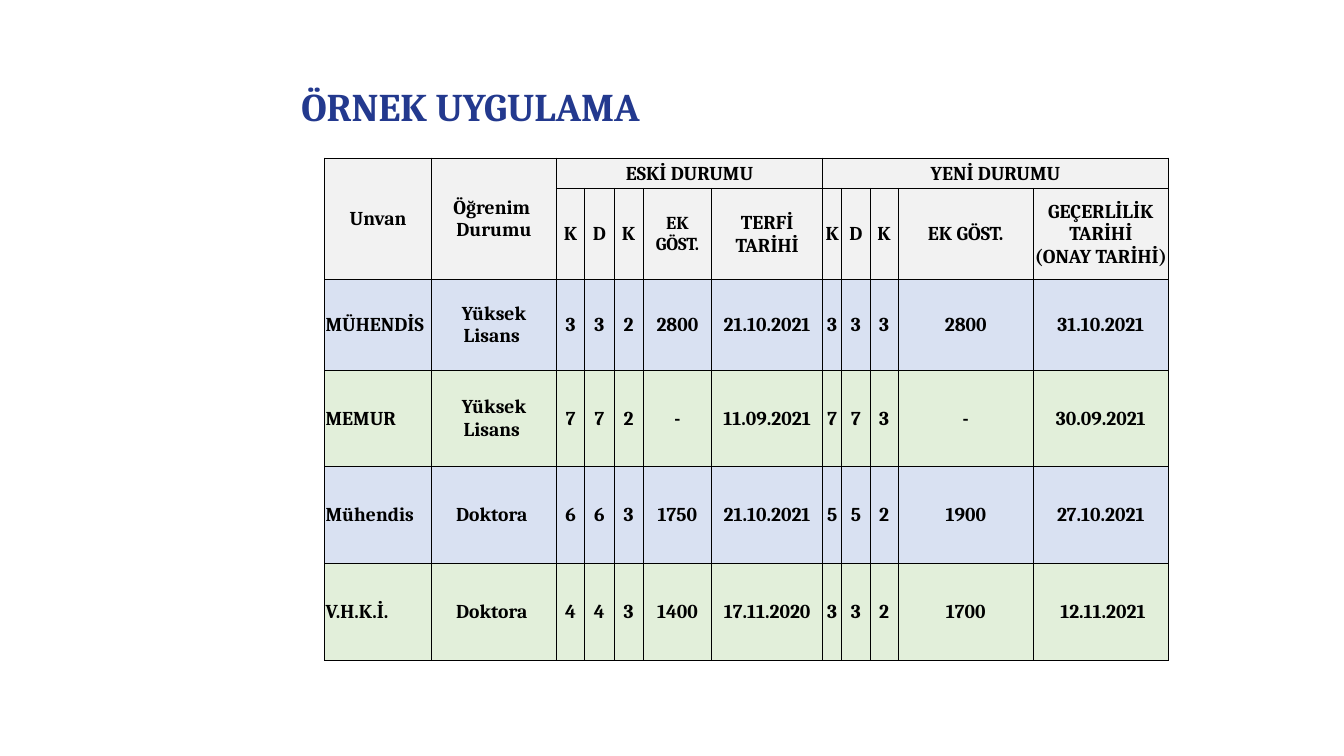
"""Builds the slide with the table of old and new staff grades."""
import pptx
import pptx.dml.color
import pptx.enum.text
import pptx.oxml
import pptx.oxml.ns
import pptx.util

COLORS = {"title": "23398E", "text": "000000", "head": "F2F2F2",
          "blue": "D9E1F2", "green": "E2EFDA"}
FONT = "Cambria"
SLIDE_WIDTH, SLIDE_HEIGHT = 13.33, 7.5
COLUMNS = [1.06, 1.24, 0.28, 0.29, 0.29, 0.68, 1.1, 0.19, 0.28, 0.28, 1.34, 1.34]
ROWS = [0.3, 0.9, 0.9, 0.96, 0.96, 0.96]
GROUP_STARTS = {0, 1, 2, 7, len(COLUMNS)}
ROW_FILLS = ["head", "head", "blue", "green", "blue", "green"]
MERGES = [(0, 0, 1, 0), (0, 1, 1, 1), (0, 2, 0, 6), (0, 7, 0, 11)]
GRADES = [
    ["Unvan", "Öğrenim \nDurumu", "ESKİ DURUMU", "", "", "", "",
     "YENİ DURUMU", "", "", "", ""],
    ["", "", "K", "D", "K", "EK GÖST.", "TERFİ TARİHİ",
     "K", "D", "K", "EK GÖST.", "GEÇERLİLİK TARİHİ\n(ONAY TARİHİ)"],
    ["MÜHENDİS", "Yüksek Lisans ", "3", "3", "2", "2800", "21.10.2021",
     "3", "3", "3", "2800", "31.10.2021"],
    ["MEMUR", "Yüksek Lisans ", "7", "7", "2", "-", "11.09.2021",
     "7", "7", "3", "-", "30.09.2021"],
    ["Mühendis", "Doktora ", "6", "6", "3", "1750", "21.10.2021",
     "5", "5", "2", "1900", "27.10.2021"],
    ["V.H.K.İ.", "Doktora ", "4", "4", "3", "1400", "17.11.2020",
     "3", "3", "2", "1700", " 12.11.2021"],
]


def color(name):
    """Return the named colour."""
    return pptx.dml.color.RGBColor.from_string(COLORS[name])


def write(paragraph, wording, size, color_name, spacing):
    """Fill a paragraph with bold runs, one for each line."""
    paragraph.line_spacing = spacing
    for index, line in enumerate(wording.split("\n")):
        if index:
            paragraph.add_line_break()
        run = paragraph.add_run()
        run.text = line
        run.font.name = FONT
        run.font.size = pptx.util.Pt(size)
        run.font.bold = True
        run.font.color.rgb = color(color_name)


def add_title(slide, wording):
    """Add the slide's heading."""
    heading = slide.shapes.add_textbox(
        pptx.util.Inches(2.89), pptx.util.Inches(0.53),
        pptx.util.Inches(SLIDE_WIDTH - 2.89), pptx.util.Inches(0.72))
    heading.text_frame.word_wrap = True
    heading.text_frame.auto_size = pptx.enum.text.MSO_AUTO_SIZE.SHAPE_TO_FIT_TEXT
    write(heading.text_frame.paragraphs[0], wording, 28, "title", 1.5)


def set_borders(cell, widths):
    """Draw the four sides of a cell in the given point widths."""
    properties = cell._tc.get_or_add_tcPr()
    for side, width in zip("LRTB", widths):
        properties.append(pptx.oxml.parse_xml(
            f'<a:ln{side} {pptx.oxml.ns.nsdecls("a")} w="{pptx.util.Pt(width)}">'
            f'<a:solidFill><a:srgbClr val="{COLORS["text"]}"/></a:solidFill>'
            f'</a:ln{side}>'))


def border_widths(row, column):
    """Return left, right, top and bottom widths, heavier around groups."""
    return [1 if column in GROUP_STARTS else 0.5,
            1 if column + 1 in GROUP_STARTS else 0.5,
            1 if row == 0 else 0.5,
            1 if row == len(ROWS) - 1 or (row == 0 and column > 1) else 0.5]


def fill_cell(cell, row, column):
    """Format one cell and write its entry."""
    set_borders(cell, border_widths(row, column))
    cell.fill.solid()
    cell.fill.fore_color.rgb = color(ROW_FILLS[row])
    cell.margin_left = cell.margin_right = cell.margin_top = pptx.util.Inches(0.01)
    cell.margin_bottom = 0
    cell.vertical_anchor = pptx.enum.text.MSO_ANCHOR.MIDDLE
    if GRADES[row][column]:
        entry = cell.text_frame.paragraphs[0]
        if column or row < 2:
            entry.alignment = pptx.enum.text.PP_ALIGN.CENTER
        size = 13 if (row, column) == (1, 5) else 14
        write(entry, GRADES[row][column], size, "text", 1.0)


def add_grades(slide):
    """Add the table of grades."""
    grades = slide.shapes.add_table(
        len(ROWS), len(COLUMNS), pptx.util.Inches(3.22), pptx.util.Inches(1.57),
        pptx.util.Inches(sum(COLUMNS)), pptx.util.Inches(sum(ROWS))).table
    grades.first_row = grades.horz_banding = False
    for column, width in zip(grades.columns, COLUMNS):
        column.width = pptx.util.Inches(width)
    for row, height in zip(grades.rows, ROWS):
        row.height = pptx.util.Inches(height)
    for top, left, bottom, right in MERGES:
        grades.cell(top, left).merge(grades.cell(bottom, right))
    for row in range(len(ROWS)):
        for column in range(len(COLUMNS)):
            fill_cell(grades.cell(row, column), row, column)


def main():
    """Build and save the slide."""
    deck = pptx.Presentation()
    deck.slide_width = pptx.util.Inches(SLIDE_WIDTH)
    deck.slide_height = pptx.util.Inches(SLIDE_HEIGHT)
    slide = deck.slides.add_slide(deck.slide_layouts[6])
    add_title(slide, "ÖRNEK UYGULAMA")
    add_grades(slide)
    deck.save("out.pptx")


if __name__ == "__main__":
    main()
